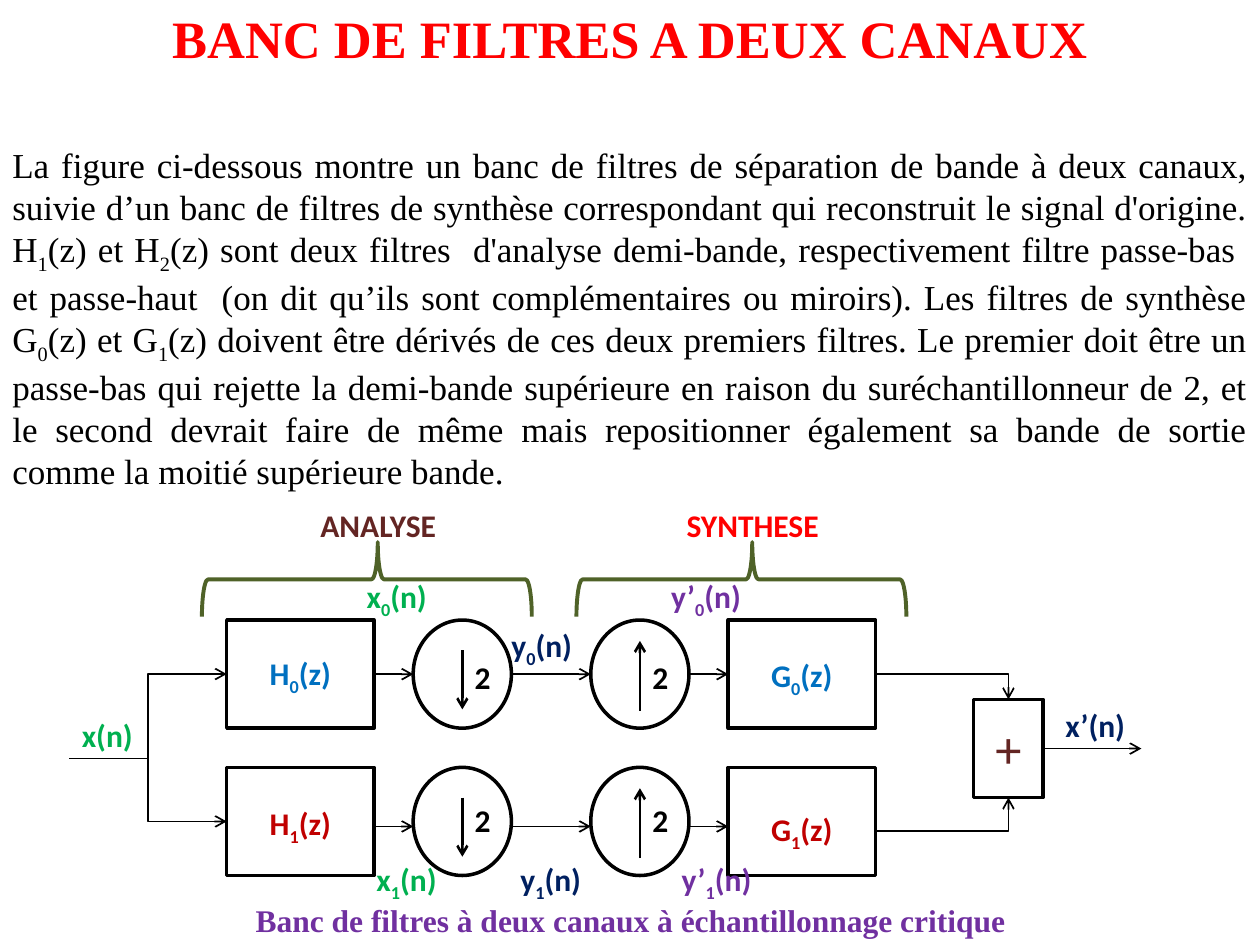
from dataclasses import dataclass

import pptx
import pptx.dml.color
import pptx.enum.shapes
import pptx.enum.text
import pptx.oxml.ns
import pptx.util
from lxml import etree

Cm = pptx.util.Cm
Pt = pptx.util.Pt
SHAPE = pptx.enum.shapes.MSO_SHAPE
CONNECTOR = pptx.enum.shapes.MSO_CONNECTOR
ALIGN = pptx.enum.text.PP_ALIGN


@dataclass(frozen=True)
class Theme:
    serif: str = "Times New Roman"
    sans: str = "Calibri"
    title_size: int = 30
    body_size: int = 20
    label_size: int = 18
    black: str = "000000"
    red: str = "FF0000"
    low_band: str = "0070C0"
    high_band: str = "C00000"
    green: str = "00B050"
    navy: str = "002060"
    purple: str = "7030A0"
    brown: str = "632523"
    olive: str = "4F6228"
    wire: float = 1
    arrow: float = 1.5
    outline: float = 2
    brace: float = 2.25


THEME = Theme()
BODY = (
    "La figure ci-dessous montre un banc de filtres de séparation de bande à deux canaux, "
    "suivie d’un banc de filtres de synthèse correspondant qui reconstruit le signal d'origine. "
    "H_1(z) et H_2(z) sont deux filtres  d'analyse demi-bande, respectivement filtre passe-bas  "
    "et passe-haut  (on dit qu’ils sont complémentaires ou miroirs). Les filtres de synthèse "
    "G_0(z) et G_1(z) doivent être dérivés de ces deux premiers filtres. Le premier doit être un "
    "passe-bas qui rejette la demi-bande supérieure en raison du suréchantillonneur de 2, et le "
    "second devrait faire de même mais repositionner également sa bande de sortie comme la "
    "moitié supérieure bande."
)


def rgb(color):
    return pptx.dml.color.RGBColor.from_string(color)


def write_text(shape, text, size=THEME.label_size, color=THEME.black, font=THEME.sans,
               bold=True, align=ALIGN.LEFT):
    """Fill a shape with one paragraph; the character after "_" is a subscript."""
    frame = shape.text_frame
    frame.word_wrap = True
    frame.auto_size = pptx.enum.text.MSO_AUTO_SIZE.NONE
    frame.vertical_anchor = pptx.enum.text.MSO_ANCHOR.TOP
    paragraph = frame.paragraphs[0]
    paragraph.alignment = align
    first, *others = text.split("_")
    pieces = [(first, False)]
    for other in others:
        pieces += [(other[0], True), (other[1:], False)]
    for piece, subscript in pieces:
        run = paragraph.add_run()
        run.text = piece
        run.font.size = Pt(size)
        run.font.name = font
        run.font.bold = bold
        run.font.color.rgb = rgb(color)
        if subscript:
            run._r.get_or_add_rPr().set("baseline", "-25000")


def add_text(slide, left, top, width, height, text, **text_format):
    box = slide.shapes.add_textbox(Cm(left), Cm(top), Cm(width), Cm(height))
    write_text(box, text, **text_format)


def add_outline(slide, kind, left, top, width, height, color=THEME.black, weight=THEME.outline):
    shape = slide.shapes.add_shape(kind, Cm(left), Cm(top), Cm(width), Cm(height))
    shape.shadow.inherit = False
    shape.fill.background()
    shape.line.color.rgb = rgb(color)
    shape.line.width = Pt(weight)
    return shape


def add_arrow(slide, start, end, kind=CONNECTOR.STRAIGHT, weight=THEME.wire, preset=None):
    connector = slide.shapes.add_connector(kind, *(Cm(value) for value in (*start, *end)))
    connector.line.color.rgb = rgb(THEME.black)
    connector.line.width = Pt(weight)
    qn = pptx.oxml.ns.qn
    properties = connector._element.spPr
    etree.SubElement(properties.find(qn("a:ln")), qn("a:tailEnd"), type="arrow")
    etree.SubElement(properties, qn("a:effectLst"))
    if preset:
        properties.find(qn("a:prstGeom")).set("prst", preset)


def add_title(slide, left, top, width, height):
    title = slide.shapes.title
    title.left, title.top, title.width, title.height = map(Cm, (left, top, width, height))
    write_text(title, "BANC DE FILTRES A DEUX CANAUX", size=THEME.title_size,
               color=THEME.red, font=THEME.serif, align=ALIGN.CENTER)


def add_stage(slide, left, top, width, name, color):
    """Heading above a brace that opens downwards."""
    add_text(slide, left + 0.1, top, width + 0.26, 1.02, name, color=color, align=ALIGN.CENTER)
    depth = 1.5
    center_x, center_y = left + width / 2, top + 0.85 + depth / 2
    brace = add_outline(slide, SHAPE.LEFT_BRACE, center_x - depth / 2, center_y - width / 2,
                        depth, width, THEME.olive, THEME.brace)
    brace.rotation = 90
    brace.adjustments[0], brace.adjustments[1] = 0.083, 0.467


def add_channel(slide, left, top, index, color, wire, drops):
    """One row of the bank: filter, down-sampler, up-sampler, filter."""
    filter_width, sampler_width, height = 2.97, 1.98, 2.18
    analysis, down, up, synthesis = (left + offset for offset in (3.17, 6.93, 10.51, 13.28))
    analysis_drop, sampler_drop, synthesis_drop = drops

    for x, letter, drop in ((analysis, "H", analysis_drop), (synthesis, "G", synthesis_drop)):
        add_outline(slide, SHAPE.RECTANGLE, x, top, filter_width, height)
        add_text(slide, x, top + drop, filter_width, 1.02, f"{letter}_{index}(z)",
                 color=color, align=ALIGN.CENTER)
    for x, tail, head in ((down, 0.61, 1.8), (up, 1.83, 0.42)):
        center = x + sampler_width / 2
        add_outline(slide, SHAPE.OVAL, x, top, sampler_width, height)
        add_arrow(slide, (center, top + tail), (center, top + head), weight=THEME.arrow)
        add_text(slide, center, top + sampler_drop, 1.2, 1.02, "2")
    for start, end in ((analysis + filter_width, down), (down + sampler_width, up),
                       (up + sampler_width, synthesis)):
        add_arrow(slide, (start, top + wire), (end, top + wire))


def add_filter_bank(slide, left, top, width):
    add_channel(slide, left, top + 2.42, 0, THEME.low_band, 1.09, (0.56, 0.64, 0.61))
    add_channel(slide, left, top + 5.39, 1, THEME.high_band, 1.19, (0.61, 0.56, 0.74))

    adder_left, adder_top, adder_width, adder_height = left + 18.23, top + 4.02, 1.4, 1.98
    adder_center = adder_left + adder_width / 2
    adder_middle = adder_top + adder_height / 2
    add_outline(slide, SHAPE.RECTANGLE, adder_left, adder_top, adder_width, adder_height)
    add_text(slide, adder_left, adder_top + 0.2, adder_width, 1.55, "+", size=THEME.title_size,
             color=THEME.brown, bold=False, align=ALIGN.CENTER)
    add_arrow(slide, (adder_left + adder_width, adder_middle), (left + width - 1.02, adder_middle))

    for input_y, output_y, adder_edge in ((3.51, 3.51, adder_top),
                                          (6.48, 6.68, adder_top + adder_height)):
        add_arrow(slide, (left, top + 5.21), (left + 3.17, top + input_y), CONNECTOR.ELBOW)
        add_arrow(slide, (left + 16.25, top + output_y), (adder_center, adder_edge),
                  CONNECTOR.ELBOW, preset="bentConnector2")

    signals = (
        ("x(n)", 0, 4.22, THEME.green), ("x’(n)", 19.83, 4.02, THEME.navy),
        ("x_0(n)", 5.74, 1.43, THEME.green), ("x_1(n)", 5.94, 7.14, THEME.green),
        ("y_0(n)", 8.66, 2.42, THEME.navy), ("y_1(n)", 8.84, 7.14, THEME.navy),
        ("y’_0(n)", 11.88, 1.43, THEME.purple), ("y’_1(n)", 12.09, 7.14, THEME.purple),
    )
    for text, x, y, color in signals:
        add_text(slide, left + x, top + y, 2.18, 1.02, text, color=color)

    for name, x, color in (("ANALYSE", 2.67, THEME.brown), ("SYNTHESE", 10.22, THEME.red)):
        add_stage(slide, left + x, top, 6.65, name, color)
    add_text(slide, left, top + 7.95, width, 1.02,
             "Banc de filtres à deux canaux à échantillonnage critique",
             color=THEME.purple, font=THEME.serif, align=ALIGN.CENTER)


def main():
    presentation = pptx.Presentation()
    presentation.slide_width, presentation.slide_height = Cm(25.4), Cm(19.05)
    slide = presentation.slides.add_slide(presentation.slide_layouts[5])
    add_title(slide, 0, 0, 25.4, 1.55)
    add_text(slide, 0, 2.77, 25.4, 7.87, BODY, size=THEME.body_size, font=THEME.serif,
             bold=False, align=ALIGN.JUSTIFY)
    add_filter_bank(slide, 1.4, 10.08, 22.63)
    presentation.save("out.pptx")


if __name__ == "__main__":
    main()
